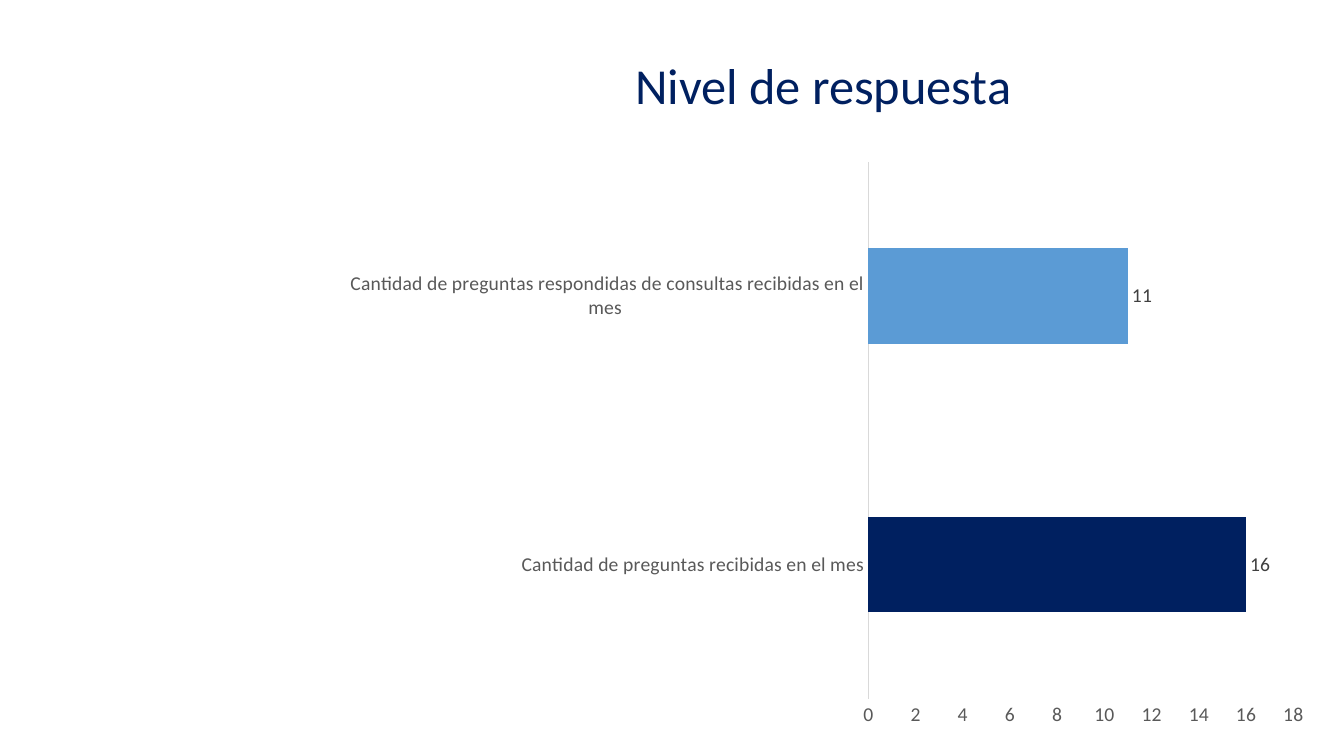
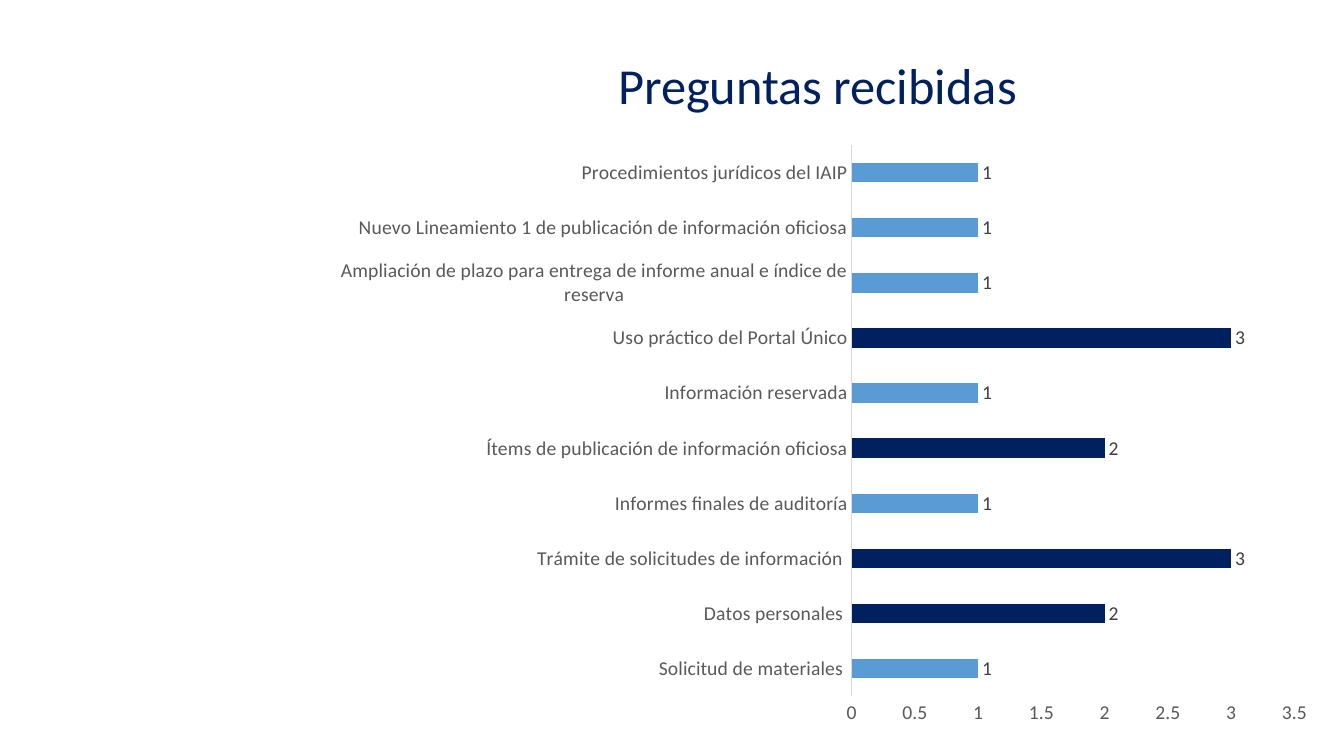
import pptx
import pptx.chart.data
import pptx.dml.color
import pptx.enum.chart
import pptx.enum.text
import pptx.util

Cm, Pt = pptx.util.Cm, pptx.util.Pt

COLORS = {
    "navy": "002060",
    "blue": "5B9BD5",
    "axis_text": "595959",
    "axis_line": "D9D9D9",
    "label": "404040",
    "text": "000000",
}

RESPONSE_LEVEL = [
    ("Cantidad de preguntas recibidas en el mes", 16),
    ("Cantidad de preguntas respondidas de consultas recibidas en el mes ", 11),
]

QUESTIONS = [
    ("Solicitud de materiales ", 1),
    ("Datos personales ", 2),
    ("Trámite de solicitudes de información ", 3),
    ("Informes finales de auditoría", 1),
    ("Ítems de publicación de información oficiosa", 2),
    ("Información reservada", 1),
    ("Uso práctico del Portal Único", 3),
    ("Ampliación de plazo para entrega de informe anual e índice de reserva", 1),
    ("Nuevo Lineamiento 1 de publicación de información oficiosa", 1),
    ("Procedimientos jurídicos del IAIP", 1),
]


def rgb(name):
    return pptx.dml.color.RGBColor.from_string(COLORS[name])


def apply(obj, **values):
    for name, value in values.items():
        setattr(obj, name, value)


class Deck:
    font_name = "Calibri"
    title_box = dict(left=Cm(12.19), top=Cm(0.66), width=Cm(17.12), height=Cm(3.12))

    def __init__(self):
        self.prs = pptx.Presentation()
        apply(self.prs, slide_width=Cm(33.87), slide_height=Cm(19.05))
        self.s = None

    def add_slide(self, title):
        self.s = self.prs.slides.add_slide(self.prs.slide_layouts[5])
        sp = self.s.shapes.title
        apply(sp, **self.title_box)
        tf = sp.text_frame
        apply(tf, text=title, word_wrap=True,
              auto_size=pptx.enum.text.MSO_AUTO_SIZE.NONE,
              vertical_anchor=pptx.enum.text.MSO_ANCHOR.MIDDLE)
        p = tf.paragraphs[0]
        apply(p, alignment=pptx.enum.text.PP_ALIGN.CENTER, line_spacing=0.9)
        self.style_font(p.runs[0].font, 36, "navy")

    def style_font(self, font, size, color):
        apply(font, name=self.font_name, size=Pt(size), bold=False)
        font.color.rgb = rgb(color)

    def style_axis(self, axis):
        none = pptx.enum.chart.XL_TICK_MARK.NONE
        apply(axis, has_major_gridlines=False, major_tick_mark=none, minor_tick_mark=none)
        self.style_font(axis.tick_labels.font, 14, "axis_text")

    def add_bars(self, rows, box, maximum, step):
        """Add a bar chart in which values above the lowest one are navy."""
        cats, values = zip(*rows)
        data = pptx.chart.data.CategoryChartData()
        data.categories = cats
        data.add_series("Series 1", values)
        chart = self.s.shapes.add_chart(
            pptx.enum.chart.XL_CHART_TYPE.BAR_CLUSTERED, *map(Cm, box), data).chart
        apply(chart, has_legend=False, has_title=False)
        self.style_font(chart.font, 14, "text")

        for axis in (chart.category_axis, chart.value_axis):
            self.style_axis(axis)
        line = chart.category_axis.format.line
        line.color.rgb = rgb("axis_line")
        line.width = Pt(0.75)
        apply(chart.value_axis, minimum_scale=0, maximum_scale=maximum, major_unit=step)
        chart.value_axis.format.line.fill.background()

        plot = chart.plots[0]
        apply(plot, gap_width=182, vary_by_categories=False, has_data_labels=True)
        labels = plot.data_labels
        apply(labels, show_value=True,
              position=pptx.enum.chart.XL_LABEL_POSITION.OUTSIDE_END)
        self.style_font(labels.font, 14, "label")

        series = plot.series[0]
        series.invert_if_negative = False
        self.fill(series, "blue")
        for i, value in enumerate(values):
            if value > min(values):
                self.fill(series.points[i], "navy")

    def fill(self, item, color):
        item.format.fill.solid()
        item.format.fill.fore_color.rgb = rgb(color)


def main():
    deck = Deck()
    deck.add_slide("Nivel de respuesta")
    deck.add_bars(RESPONSE_LEVEL, (8.33, 3.78, 25.02, 14.83), 18, 2)
    deck.add_slide("Preguntas recibidas ")
    deck.add_bars(QUESTIONS, (8.08, 3.35, 25.37, 15.21), 3.5, 0.5)
    deck.prs.save("out.pptx")


if __name__ == "__main__":
    main()
